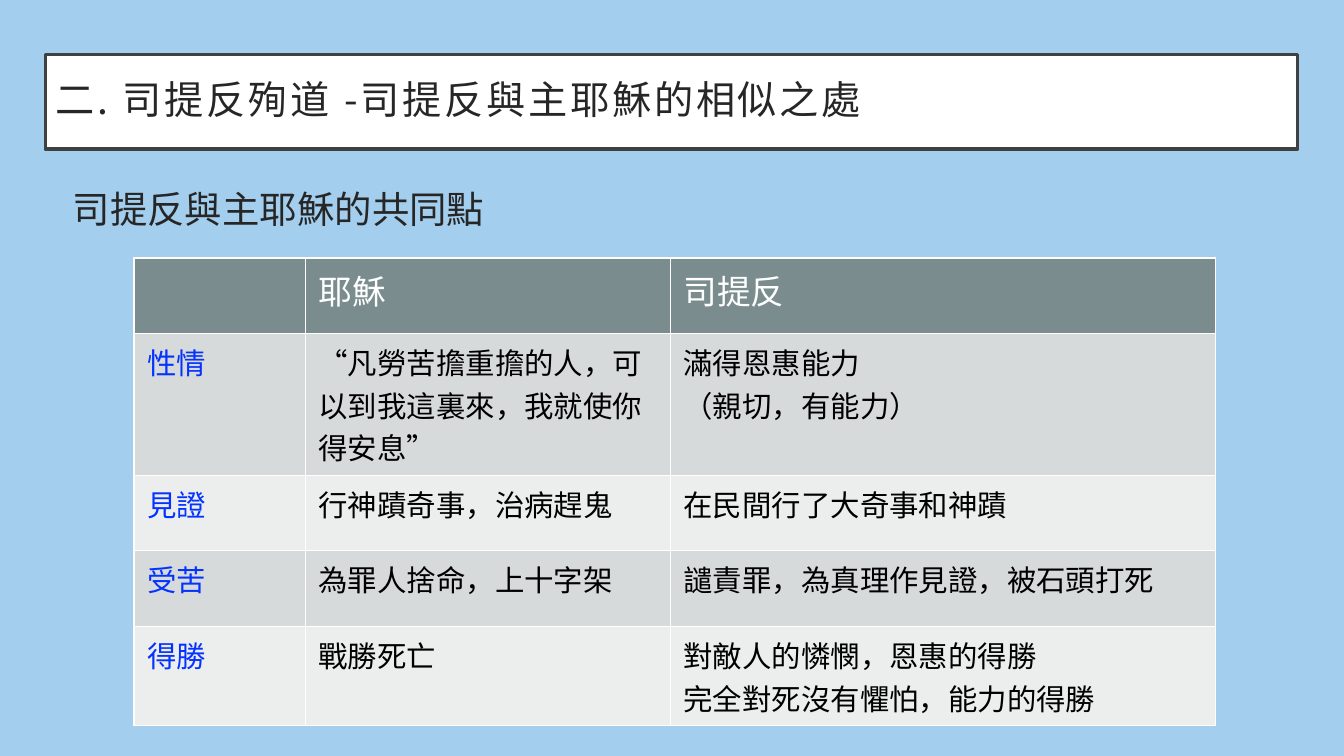
import pptx
import pptx.util
import pptx.dml.color
import pptx.enum.text
import pptx.oxml.ns
from lxml import etree

W, H = 13.33, 7.5
CJK = "Noto Sans CJK SC"
COLUMNS = [1.7, 3.62, 5.41]
ROWS = [
    (0.75, ["", "耶穌", "司提反"]),
    (1.2, ["性情", "“凡勞苦擔重擔的人，可以到我這裏來，我就使你得安息”", "滿得恩惠能力\n（親切，有能力）"]),
    (0.75, ["見證", "行神蹟奇事，治病趕鬼", "在民間行了大奇事和神蹟"]),
    (0.75, ["受苦", "為罪人捨命，上十字架", "譴責罪，為真理作見證，被石頭打死"]),
    (0.84, ["得勝", "戰勝死亡", "對敵人的憐憫，恩惠的得勝\n完全對死沒有懼怕，能力的得勝"]),
]


def color(value):
    return pptx.dml.color.RGBColor.from_string(value)


def inches(*values):
    return [pptx.util.Inches(v) for v in values]


def add(parent, tag, **attrs):
    return etree.SubElement(parent, pptx.oxml.ns.qn(tag), attrs)


def set_attrs(obj, values):
    for name, value in values.items():
        setattr(obj, name, value)


def paint(fill, value):
    fill.solid()
    fill.fore_color.rgb = color(value)


def write(p, text, size, font, value):
    r = p.add_run()
    r.text = text
    set_attrs(r.font, {"size": pptx.util.Pt(size), "name": font, "bold": False})
    r.font.color.rgb = color(value)
    rPr = r.font._element
    add(rPr, "a:ea", typeface=CJK)
    return rPr


def prepare(sp, box, anchor):
    sp.left, sp.top, sp.width, sp.height = inches(*box)
    tf = sp.text_frame
    margin = pptx.util.Inches(0.1)
    set_attrs(tf, {
        "word_wrap": True, "vertical_anchor": anchor,
        "auto_size": pptx.enum.text.MSO_AUTO_SIZE.NONE,
        "margin_left": margin, "margin_right": margin,
        "margin_top": margin, "margin_bottom": margin,
    })
    p = tf.paragraphs[0]
    p.alignment = pptx.enum.text.PP_ALIGN.LEFT
    return p


def add_title(s, box):
    sp = s.shapes.title
    p = prepare(sp, box, pptx.enum.text.MSO_ANCHOR.MIDDLE)
    paint(sp.fill, "FFFFFF")
    sp.line.color.rgb = color("404040")
    sp.line.width = pptx.util.Pt(2.5)
    p.line_spacing = 0.9
    rPr = write(p, "二. 司提反殉道 -司提反與主耶穌的相似之處", 28, CJK, "262626")
    rPr.set("spc", "200")


def add_body(s, box):
    p = prepare(s.placeholders[1], box, pptx.enum.text.MSO_ANCHOR.TOP)
    p.space_before = pptx.util.Pt(5.3)
    pPr = p._p.get_or_add_pPr()
    pPr.set("marL", str(pptx.util.Inches(0.17)))
    pPr.set("indent", "0")
    add(pPr, "a:buNone")
    write(p, "司提反與主耶穌的共同點", 26.7, "Arial", "262626")


def fill_cell(cell, text, size, value, background):
    side, end = inches(0.13, 0.07)
    set_attrs(cell, {"margin_left": side, "margin_right": side,
                     "margin_top": end, "margin_bottom": end})
    tcPr = cell._tc.get_or_add_tcPr()
    for edge in ("a:lnL", "a:lnR", "a:lnT", "a:lnB"):
        ln = add(tcPr, edge, w=str(pptx.util.Pt(1)))
        add(add(ln, "a:solidFill"), "a:srgbClr", val="FFFFFF")
    paint(cell.fill, background)
    tf = cell.text_frame
    for i, line in enumerate(text.split("\n")):
        p = tf.add_paragraph() if i else tf.paragraphs[0]
        if line:
            write(p, line, size, CJK, value)


def add_comparison(s, box):
    table = s.shapes.add_table(len(ROWS), len(COLUMNS), *inches(*box)).table
    set_attrs(table, {"first_row": False, "horz_banding": False})
    for column, width in zip(table.columns, COLUMNS):
        column.width = pptx.util.Inches(width)
    for i, (height, texts) in enumerate(ROWS):
        table.rows[i].height = pptx.util.Inches(height)
        for j, text in enumerate(texts):
            if i == 0:
                style = 24, "FFFFFF", "7A8C8E"
            else:
                style = 21, "000000" if j else "0432FF", "D7DADB" if i % 2 else "ECEEEE"
            fill_cell(table.cell(i, j), text, *style)


def main():
    prs = pptx.Presentation()
    prs.slide_width, prs.slide_height = inches(W, H)
    s = prs.slides.add_slide(prs.slide_layouts[1])
    paint(s.background.fill, "A3CEED")
    left, width = 0.45, 12.42
    add_title(s, (left, 0.54, width, 0.94))
    add_body(s, (left, 1.75, width, 5.21))
    add_comparison(s, (1.33, 2.56, sum(COLUMNS), sum(row[0] for row in ROWS)))
    prs.save("out.pptx")


if __name__ == "__main__":
    main()
